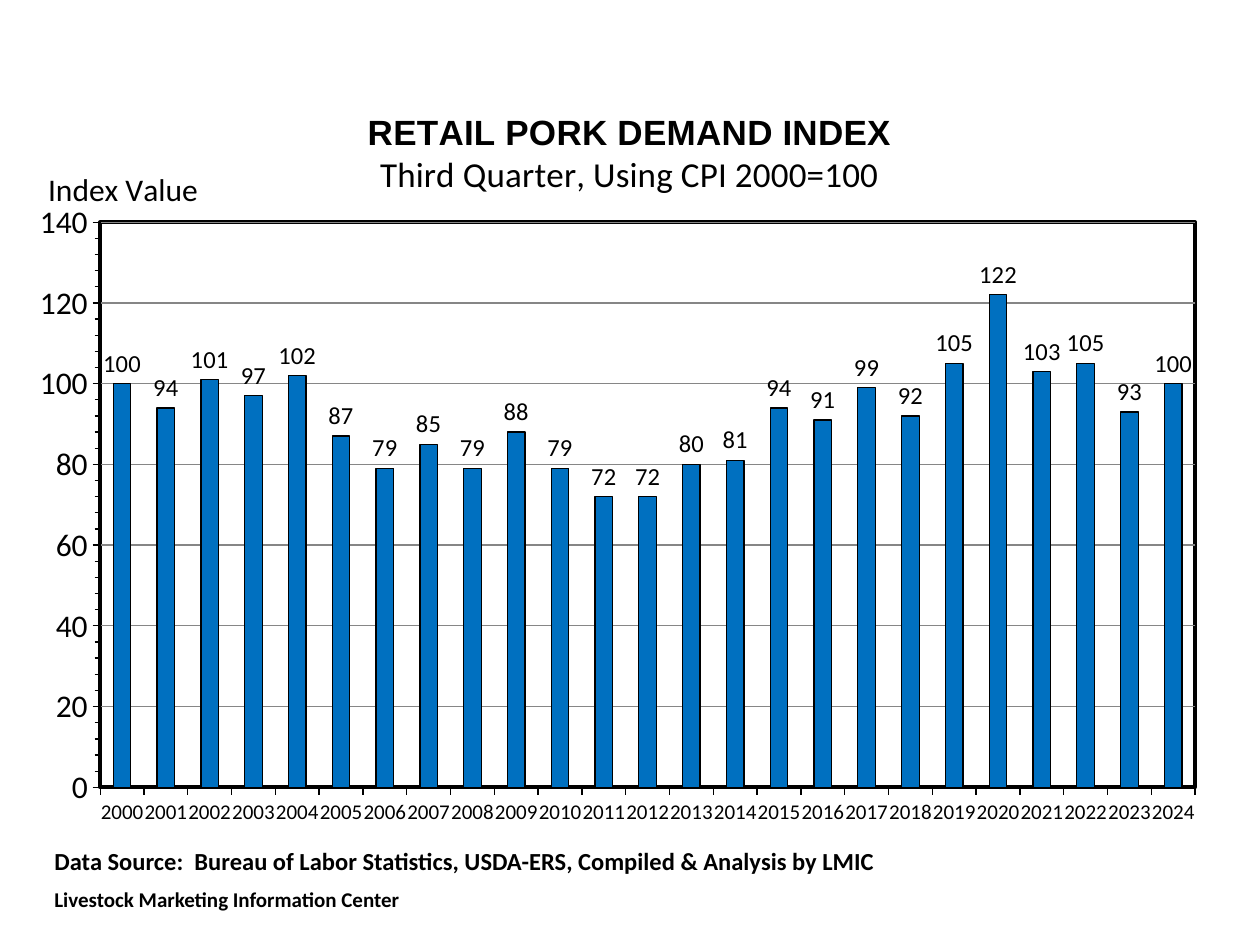
from dataclasses import dataclass

from pptx import Presentation
from pptx.chart.data import CategoryChartData
from pptx.dml.color import RGBColor
from pptx.enum.chart import XL_CHART_TYPE as ChartType
from pptx.enum.chart import XL_LABEL_POSITION as LabelPosition
from pptx.enum.chart import XL_TICK_MARK as TickMark
from pptx.oxml import parse_xml
from pptx.oxml.ns import nsdecls, qn
from pptx.util import Pt


@dataclass(frozen=True)
class Theme:
    ink: RGBColor = RGBColor(0, 0, 0)
    bar: RGBColor = RGBColor(0x00, 0x70, 0xC0)
    grid: RGBColor = RGBColor(0x86, 0x86, 0x86)
    body_font: str = "Calibri"
    title_font: str = "Arial"
    title_size: int = 20
    axis_size: int = 18
    label_size: int = 14
    small_size: int = 12


THEME = Theme()
CHART_WIDTH, CHART_HEIGHT = Pt(696), Pt(426)
AUTO_ROTATION = "-60000000"
FIRST_YEAR = 2000
DEMAND_INDEX = [100, 94, 101, 97, 102, 87, 79, 85, 79, 88, 79, 72, 72,
                80, 81, 94, 91, 99, 92, 105, 122, 103, 105, 93, 100]


def set_font(font, size, bold=False, name=THEME.body_font):
    font.size = Pt(size)
    font.bold = bold
    font.name = name
    font.color.rgb = THEME.ink


def set_line(line, color=THEME.ink):
    line.width = Pt(0.75)
    line.color.rgb = color


def write_lines(text_frame, lines):
    for index, (text, style) in enumerate(lines):
        paragraph = text_frame.add_paragraph() if index else text_frame.paragraphs[0]
        paragraph.text = text
        set_font(paragraph.font, **style)


def place(element, index, left, top, width=None, height=None):
    for old in element.findall(qn("c:layout")):
        element.remove(old)
    inner = '<c:layoutTarget val="inner"/>' if width else ""
    size = (f'<c:w val="{width / CHART_WIDTH}"/><c:h val="{height / CHART_HEIGHT}"/>'
            if width else "")
    element.insert(index, parse_xml(
        f'<c:layout {nsdecls("c")}><c:manualLayout>{inner}'
        f'<c:xMode val="edge"/><c:yMode val="edge"/>'
        f'<c:x val="{left / CHART_WIDTH}"/><c:y val="{top / CHART_HEIGHT}"/>'
        f'{size}</c:manualLayout></c:layout>'))


def frame_plot(plot_area):
    place(plot_area, 0, Pt(45.25), Pt(79), Pt(625.75), Pt(323))
    plot_area.append(parse_xml(
        f'<c:spPr {nsdecls("c", "a")}>'
        '<a:solidFill><a:srgbClr val="FFFFFF"/></a:solidFill>'
        f'<a:ln w="{Pt(2.25)}"><a:solidFill><a:srgbClr val="{THEME.ink}"/>'
        '</a:solidFill></a:ln></c:spPr>'))


def style_years(axis):
    axis.major_tick_mark = TickMark.OUTSIDE
    set_font(axis.tick_labels.font, THEME.small_size)
    set_line(axis.format.line)
    years = axis._element
    years.find(qn("c:txPr")).find(qn("a:bodyPr")).set("rot", AUTO_ROTATION)
    years.find(qn("c:noMultiLvlLbl")).addprevious(
        parse_xml(f'<c:tickLblSkip {nsdecls("c")} val="1"/>'))


def style_index_axis(axis):
    axis.minimum_scale, axis.maximum_scale = 0, 140
    axis.major_unit, axis.minor_unit = 20, 4
    axis.major_tick_mark = axis.minor_tick_mark = TickMark.OUTSIDE
    set_font(axis.tick_labels.font, THEME.axis_size)
    set_line(axis.format.line)
    set_line(axis.major_gridlines.format.line, THEME.grid)
    caption = axis.axis_title
    write_lines(caption.text_frame, [("Index Value", dict(size=THEME.axis_size))])
    caption._element.find(".//" + qn("a:bodyPr")).set("rot", "0")
    place(caption._element, 1, Pt(12.25), Pt(44.25))


def style_bars(plot):
    plot.gap_width = 150
    plot.vary_by_categories = False
    bars = plot.series[0]
    bars.format.fill.solid()
    bars.format.fill.fore_color.rgb = THEME.bar
    set_line(bars.format.line)
    labels = bars.data_labels
    labels.show_value = True
    labels.position = LabelPosition.OUTSIDE_END
    labels.number_format = "#,##0"
    labels.number_format_is_linked = False
    set_font(labels.font, THEME.label_size)


def add_demand_chart(slide):
    demand = CategoryChartData()
    demand.categories = [str(FIRST_YEAR + n) for n in range(len(DEMAND_INDEX))]
    demand.add_series("Series 1", DEMAND_INDEX)
    chart = slide.shapes.add_chart(ChartType.COLUMN_CLUSTERED, Pt(12), Pt(48),
                                   CHART_WIDTH, CHART_HEIGHT, demand).chart
    set_font(chart.font, THEME.axis_size)
    chart.has_legend = False
    write_lines(chart.chart_title.text_frame, [
        ("RETAIL PORK DEMAND INDEX",
         dict(size=THEME.title_size, bold=True, name=THEME.title_font)),
        ("Third Quarter, Using CPI 2000=100", dict(size=THEME.title_size)),
    ])
    place(chart.chart_title._element, 1, Pt(196), Pt(13.5))
    style_years(chart.category_axis)
    style_index_axis(chart.value_axis)
    style_bars(chart.plots[0])
    frame_plot(chart._chartSpace.chart.plotArea)


def add_source_note(slide):
    note = slide.shapes.add_textbox(Pt(24), Pt(480), Pt(498), Pt(46)).text_frame
    note.word_wrap = True
    write_lines(note, [
        ("Data Source:  Bureau of Labor Statistics, USDA-ERS, Compiled & Analysis by LMIC",
         dict(size=THEME.label_size, bold=True)),
        ("Livestock Marketing Information Center",
         dict(size=THEME.small_size, bold=True)),
    ])
    note.paragraphs[1].space_before = Pt(6)


def main():
    deck = Presentation()
    deck.slide_width, deck.slide_height = Pt(720), Pt(540)
    slide = deck.slides.add_slide(deck.slide_layouts[6])
    add_demand_chart(slide)
    add_source_note(slide)
    deck.save("out.pptx")


if __name__ == "__main__":
    main()
